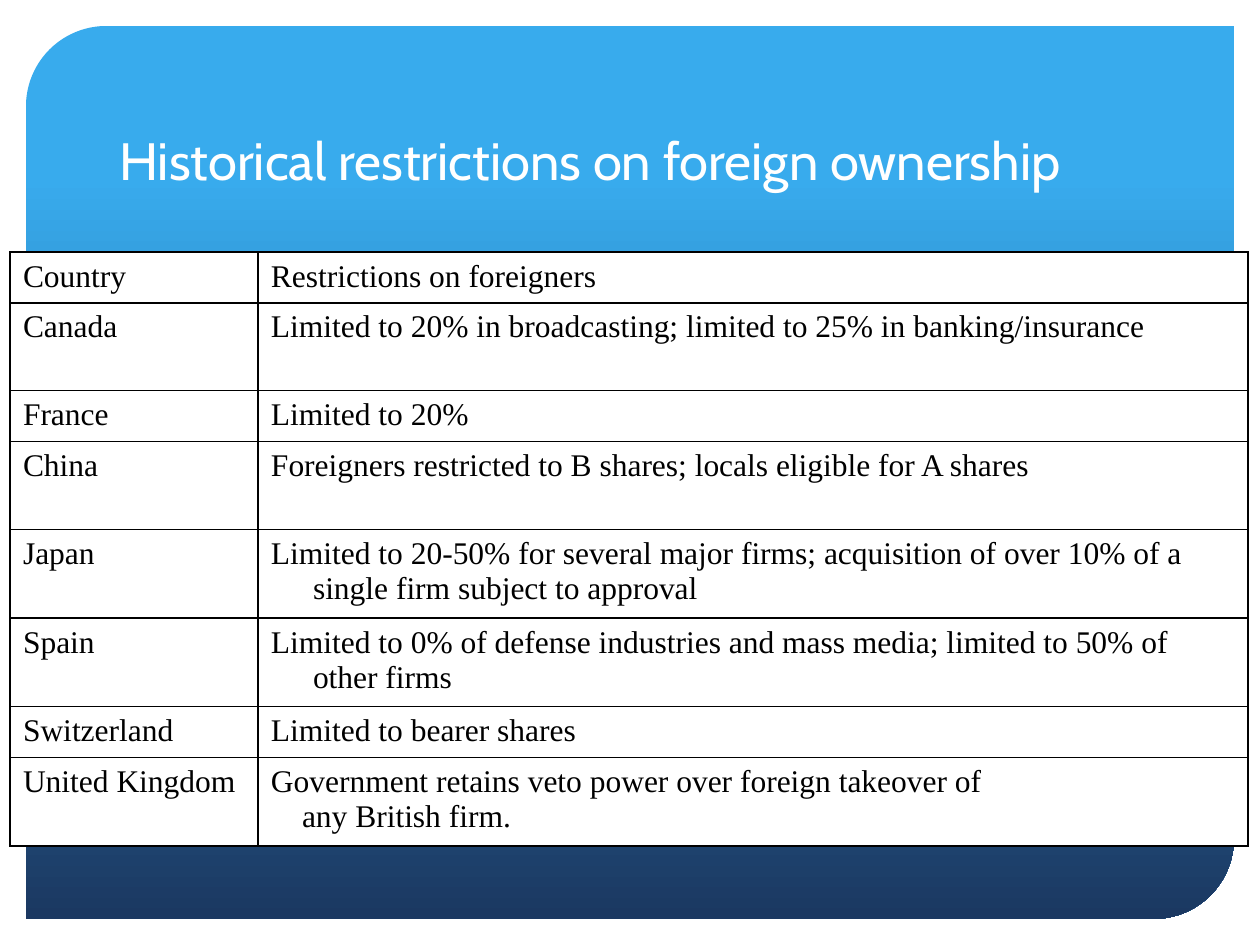
from dataclasses import dataclass
from typing import Any

from lxml import etree
from pptx import Presentation
from pptx import util as u
from pptx.dml.color import RGBColor
from pptx.enum import shapes, text
from pptx.oxml import ns

WHITE = RGBColor(0xFF, 0xFF, 0xFF)
BLACK = RGBColor(0x00, 0x00, 0x00)
SKY = RGBColor(0x38, 0xAB, 0xED)
NAVY = RGBColor(0x1B, 0x38, 0x61)

PX_PER_INCH = 126
SHORT, TALL = 49, 88
HANG = (42, -42)
FLUSH = (0, 0)
SHIFTED = (31, 0)

TITLE_FORMAT = {"name": "Cabin", "size": u.Pt(30)}
CELL_FORMAT = {"name": "Times New Roman", "size": u.Pt(18)}


def px(length: int) -> int:
    return round(length * u.Inches(1) / PX_PER_INCH)


CELL_LAYOUT = {
    "margin_left": px(13),
    "margin_right": px(13),
    "margin_top": px(7),
    "margin_bottom": px(6),
}


@dataclass(frozen=True)
class Line:
    wording: str
    indent: tuple[int, int] = HANG


@dataclass(frozen=True)
class Rule:
    height: int
    country: Line
    restrictions: tuple[Line, ...]


RULES = (
    Rule(SHORT, Line("Country"), (Line("Restrictions on foreigners"),)),
    Rule(TALL, Line("Canada"),
         (Line("Limited to 20% in broadcasting; limited to 25% in banking/insurance"),)),
    Rule(SHORT, Line("France"), (Line("Limited to 20%"),)),
    Rule(TALL, Line("China"),
         (Line("Foreigners restricted to B shares; locals eligible for A shares"),)),
    Rule(TALL, Line("Japan"),
         (Line("Limited to 20-50% for several major firms; "
               "acquisition of over 10% of a single firm subject to approval"),)),
    Rule(TALL, Line("Spain"),
         (Line("Limited to 0% of defense industries and mass media; "
               "limited to 50% of other firms"),)),
    Rule(SHORT, Line("Switzerland"), (Line("Limited to bearer shares"),)),
    Rule(TALL, Line("United Kingdom", FLUSH),
         (Line("Government retains veto power over foreign takeover of", FLUSH),
          Line("any British firm.", SHIFTED))),
)


def apply(target: Any, values: dict[str, Any]) -> None:
    for name, value in values.items():
        setattr(target, name, value)


def add_span(para: Any, wording: str, values: dict[str, Any], color: RGBColor) -> None:
    span = para.add_run()
    span.text = wording
    apply(span.font, values)
    span.font.color.rgb = color


def add_panel(page: Any) -> None:
    panel = page.shapes.add_shape(
        shapes.MSO_SHAPE.ROUND_2_DIAG_RECTANGLE, px(26), px(26), px(1208), px(893))
    panel.adjustments[0] = 0.09
    panel.adjustments[1] = 0
    panel.shadow.inherit = False
    panel.line.fill.background()
    panel.fill.gradient()
    panel.fill.gradient_angle = 270
    for stop, (position, color) in zip(panel.fill.gradient_stops, ((0.17, SKY), (1, NAVY))):
        stop.position = position
        stop.color.rgb = color


def add_title(page: Any) -> None:
    box = page.shapes.add_textbox(px(107), px(53), px(1045), px(144))
    apply(box.text_frame, {"word_wrap": True, "vertical_anchor": text.MSO_ANCHOR.BOTTOM})
    add_span(box.text_frame.paragraphs[0], "Historical restrictions on foreign ownership",
             TITLE_FORMAT, WHITE)


def add_borders(cell: Any) -> None:
    properties = cell._tc.get_or_add_tcPr()
    for side in ("lnL", "lnR", "lnT", "lnB"):
        border = etree.SubElement(properties, ns.qn(f"a:{side}"), w=str(u.Pt(1)))
        fill = etree.SubElement(border, ns.qn("a:solidFill"))
        etree.SubElement(fill, ns.qn("a:srgbClr"), val=str(BLACK))


def fill_cell(cell: Any, lines: tuple[Line, ...]) -> None:
    apply(cell, CELL_LAYOUT)
    add_borders(cell)
    cell.fill.solid()
    cell.fill.fore_color.rgb = WHITE
    frame = cell.text_frame
    for index, line in enumerate(lines):
        para = frame.add_paragraph() if index else frame.paragraphs[0]
        properties = para._p.get_or_add_pPr()
        for name, length in zip(("marL", "indent"), line.indent):
            properties.set(name, str(px(length)))
        add_span(para, line.wording, CELL_FORMAT, BLACK)


def add_rules(page: Any) -> None:
    widths = (248, 990)
    height = sum(rule.height for rule in RULES)
    table = page.shapes.add_table(
        len(RULES), len(widths), px(10), px(252), px(sum(widths)), px(height)).table
    apply(table, {"first_row": False, "horz_banding": False})
    for column, width in zip(table.columns, widths):
        column.width = px(width)
    for row, rule in zip(table.rows, RULES):
        row.height = px(rule.height)
        for cell, lines in zip(row.cells, ((rule.country,), rule.restrictions)):
            fill_cell(cell, lines)


def main() -> None:
    deck = Presentation()
    apply(deck, {"slide_width": px(1260), "slide_height": px(945)})
    page = deck.slides.add_slide(deck.slide_layouts[6])
    add_panel(page)
    add_title(page)
    add_rules(page)
    deck.save("out.pptx")


if __name__ == "__main__":
    main()
